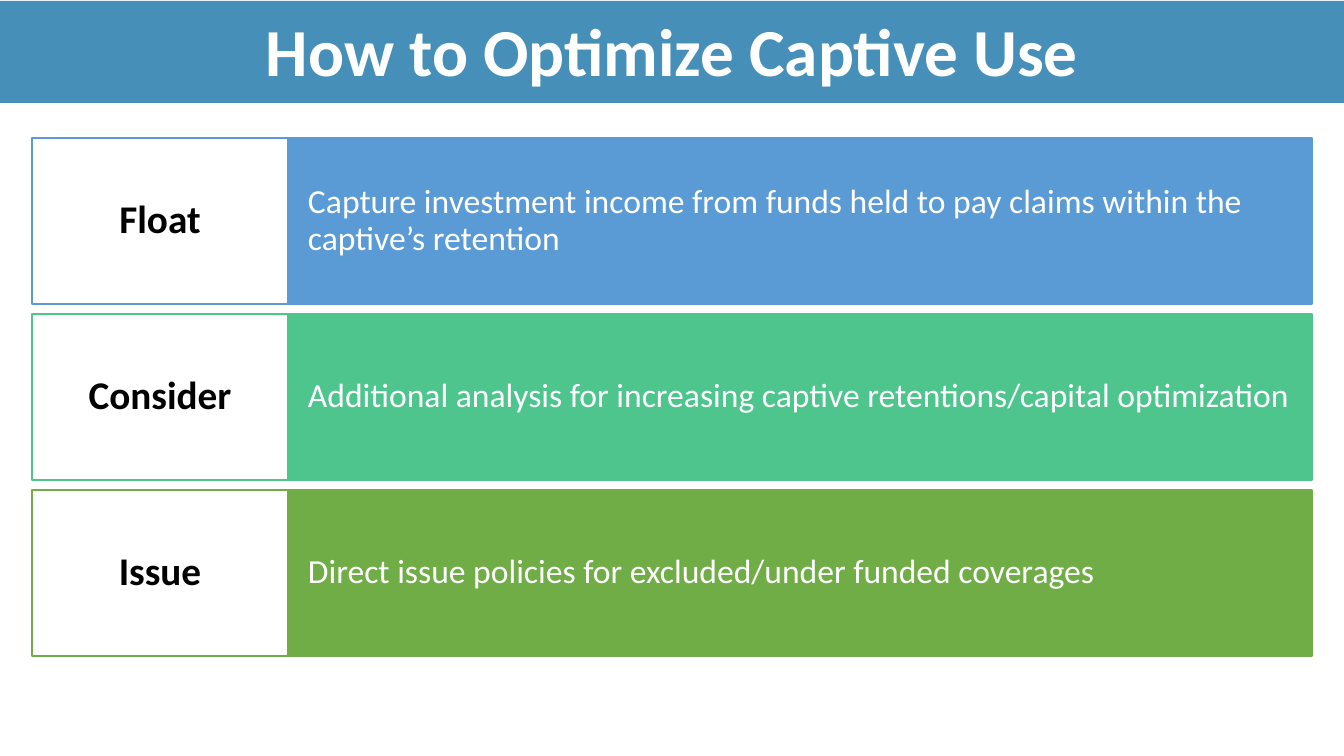
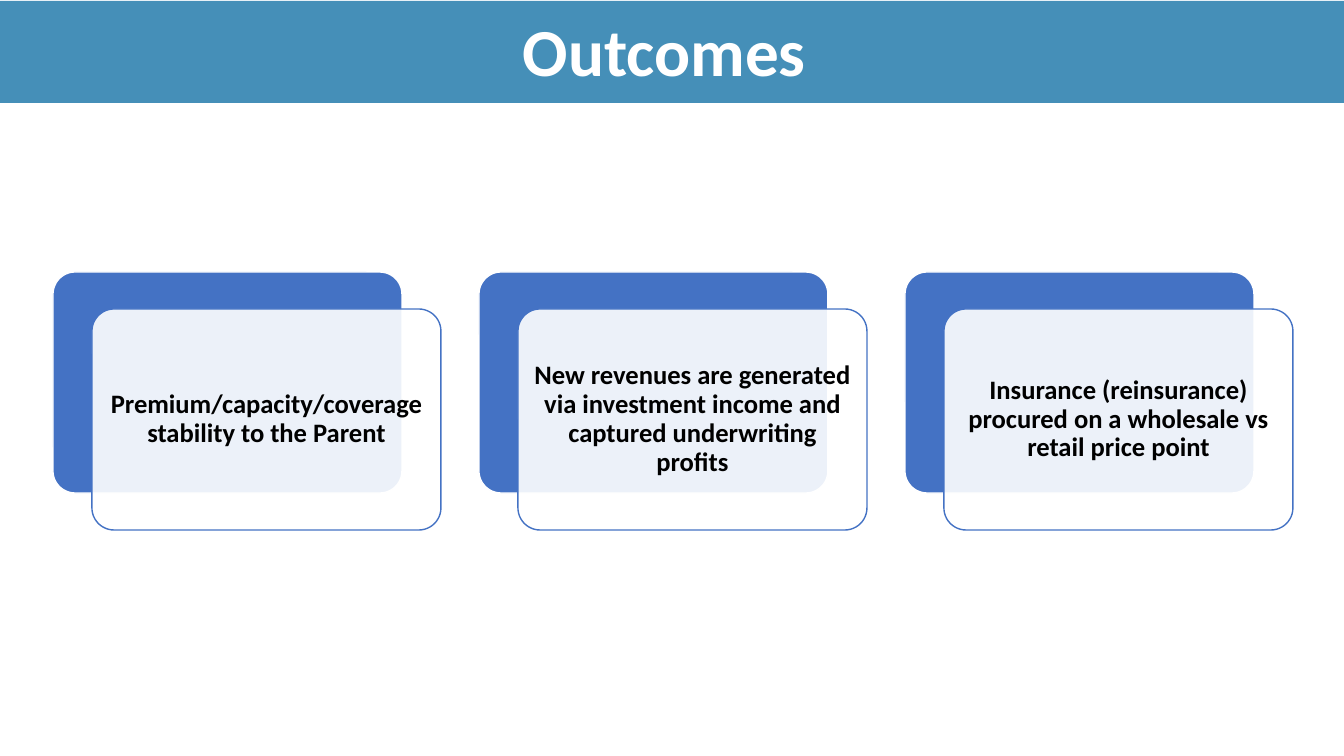
from dataclasses import dataclass

from lxml import etree
from pptx import Presentation
from pptx.dml.color import RGBColor as RGB
from pptx.enum.shapes import MSO_SHAPE as SHAPE
from pptx.enum.text import MSO_ANCHOR as ANCHOR, PP_ALIGN as ALIGN
from pptx.oxml.ns import qn
from pptx.util import Emu, Pt

SLIDE_W, SLIDE_H = 1344, 756
SCALE = 12192000 / SLIDE_W


@dataclass(frozen=True)
class Theme:
    """Hold the colours, font and type sizes of the deck."""
    font: str = "Calibri"
    white: str = "FFFFFF"
    black: str = "000000"
    band: str = "458FB8"
    card: str = "4472C4"
    rows: tuple = ("5B9BD5", "4DC58D", "70AD47")
    title_size: int = 48
    label_size: int = 28
    body_size: int = 24
    card_size: int = 19
    line_width: int = 1


T = Theme()

STEPS = (
    ("Float", "Capture investment income from funds held to pay claims within the captive’s retention"),
    ("Consider", "Additional analysis for increasing captive retentions/capital optimization"),
    ("Issue", "Direct issue policies for excluded/under funded coverages"),
)
OUTCOMES = (
    "Premium/capacity/coverage stability to the Parent",
    "New revenues are generated via investment income and captured underwriting profits",
    "Insurance (reinsurance) procured on a wholesale vs retail price point",
)


def px(n):
    """Turn pixels into EMU."""
    return Emu(round(n * SCALE))


def add_box(s, kind, box, fill, line=None, alpha=None):
    """Add a filled preset shape with an optional outline and opacity."""
    sp = s.shapes.add_shape(kind, *map(px, box))
    sp.shadow.inherit = False
    sp.fill.solid()
    sp.fill.fore_color.rgb = RGB.from_string(fill)
    if alpha is not None:
        clr = sp.fill._xPr.find(qn("a:solidFill"))[0]
        etree.SubElement(clr, qn("a:alpha")).set("val", str(alpha * 1000))
    if line:
        sp.line.color.rgb = RGB.from_string(line)
        sp.line.width = Pt(T.line_width)
    else:
        sp.line.fill.background()
    return sp


def write(sp, text, size, color, bold=False, align=ALIGN.CENTER, inset=(10, 5)):
    """Write one vertically centred paragraph into a shape."""
    tf = sp.text_frame
    tf.word_wrap = True
    tf.vertical_anchor = ANCHOR.MIDDLE
    tf.margin_left = tf.margin_right = px(inset[0])
    tf.margin_top = tf.margin_bottom = px(inset[1])
    p = tf.paragraphs[0]
    p.alignment = align
    p.line_spacing = 0.9
    r = p.add_run()
    r.text = text
    r.font.name, r.font.size, r.font.bold = T.font, Pt(size), bold
    r.font.color.rgb = RGB.from_string(color)


def add_title(s, text):
    """Place the title band and its text."""
    add_box(s, SHAPE.RECTANGLE, (0, 1, SLIDE_W, 102), T.band)
    sp = s.shapes.add_textbox(*map(px, (0, 1, SLIDE_W, 108)))
    write(sp, text, T.title_size, T.white, bold=True)


def add_row(s, box, label, text, color):
    """Place a label cell and a coloured description, one to four in width."""
    x, y, w, h = box
    label_w = w // 5
    body = add_box(s, SHAPE.RECTANGLE, (x + label_w, y, w - label_w, h), color, color)
    write(body, text, T.body_size, T.white, align=ALIGN.LEFT, inset=(20, 42))
    head = add_box(s, SHAPE.RECTANGLE, (x, y, label_w, h), T.white, color)
    write(head, label, T.label_size, T.black, bold=True, inset=(13, 16))


def add_card(s, box, text):
    """Place a solid back panel and an offset translucent text panel."""
    x, y, w, h = box
    dx, dy = 39, 37
    back = add_box(s, SHAPE.ROUNDED_RECTANGLE, (x, y, w - dx, h - dy), T.card, T.white)
    front = add_box(s, SHAPE.ROUNDED_RECTANGLE, (x + dx, y + dy, w - dx, h - dy),
                    T.white, T.card, alpha=90)
    for sp in (back, front):
        sp.adjustments[0] = 0.1
    write(front, text, T.card_size, T.black, bold=True, inset=(8, 8))


def steps_slide(s, box):
    """Stack the steps as rows in the given box."""
    add_title(s, "How to Optimize Captive Use")
    x, y, w, h = box
    gap = 10
    row_h = (h - gap * (len(STEPS) - 1)) // len(STEPS)
    for i, ((label, text), color) in enumerate(zip(STEPS, T.rows)):
        add_row(s, (x, y + i * (row_h + gap), w, row_h), label, text, color)


def outcomes_slide(s, box):
    """Set the outcomes side by side as cards in the given box."""
    add_title(s, "Outcomes ")
    x, y, w, h = box
    gap = 38
    card_w = (w - gap * (len(OUTCOMES) - 1)) // len(OUTCOMES)
    for i, text in enumerate(OUTCOMES):
        add_card(s, (x + i * (card_w + gap), y, card_w, h), text)


def main():
    """Build and save the deck."""
    prs = Presentation()
    prs.slide_width, prs.slide_height = px(SLIDE_W), px(SLIDE_H)
    blank = prs.slide_layouts[6]
    steps_slide(prs.slides.add_slide(blank), (32, 138, 1280, 518))
    outcomes_slide(prs.slides.add_slide(blank), (53, 272, 1240, 258))
    prs.save("out.pptx")


if __name__ == "__main__":
    main()
